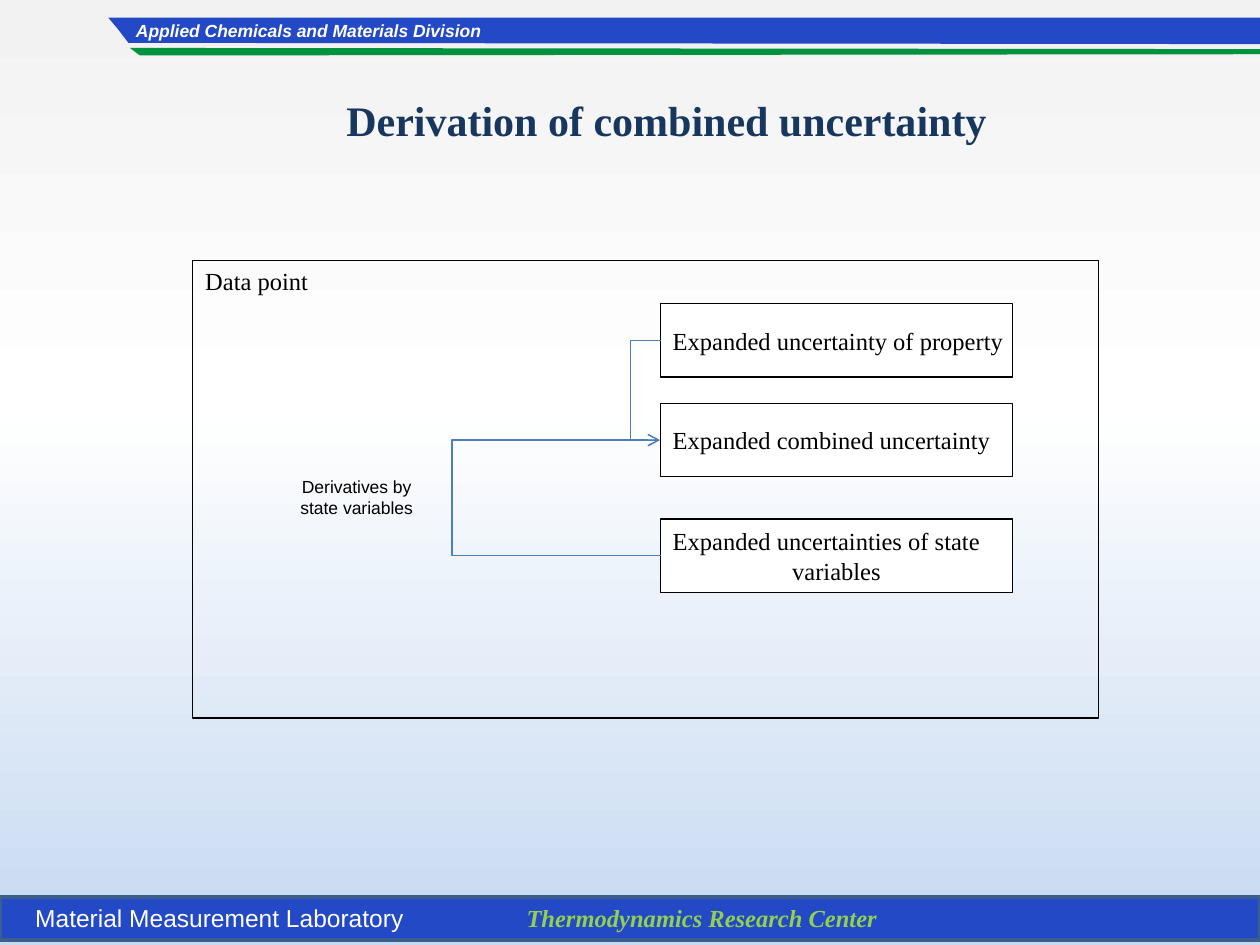
"""Build the slide on the derivation of combined uncertainty."""
from lxml.etree import SubElement
from pptx import Presentation
from pptx.dml.color import RGBColor
from pptx.enum.shapes import MSO_CONNECTOR, MSO_SHAPE
from pptx.enum.text import MSO_ANCHOR, MSO_AUTO_SIZE, PP_ALIGN
from pptx.oxml.ns import qn
from pptx.util import Pt

HUES = {"blue": "2349C6", "edge": "3A5F8C", "green": "00923F", "lime": "92D050",
        "navy": "17375E", "link": "4B7EBC", "black": "000000", "white": "FFFFFF"}
SKY = {0: "F2F2F2", 43000: "FFFFFF", 100000: "C6D9F1"}
SERIF, SANS = "Times New Roman", "Arial"
BODY = {"name": SERIF, "size": Pt(14)}
LEFT, MID = PP_ALIGN.LEFT, PP_ALIGN.CENTER


def write(shape, lines, hue, style, aligns=(LEFT,), anchor=MSO_ANCHOR.TOP, wrap=True):
    frame = shape.text_frame
    frame.text = "\n".join(lines)
    form = {"word_wrap": wrap, "auto_size": MSO_AUTO_SIZE.NONE, "vertical_anchor": anchor}
    for key, val in form.items():
        setattr(frame, key, val)
    for para, align in zip(frame.paragraphs, aligns):
        para.alignment = align
        for key, val in style.items():
            setattr(para.font, key, val)
        para.font.color.rgb = RGBColor.from_string(HUES[hue])


def paint(shape, fill=None, line=None, width=0.75):
    shape.shadow.inherit = False
    if fill:
        shape.fill.solid()
        shape.fill.fore_color.rgb = RGBColor.from_string(HUES[fill])
    else:
        shape.fill.background()
    if line:
        shape.line.color.rgb = RGBColor.from_string(HUES[line])
        shape.line.width = Pt(width)
    else:
        shape.line.fill.background()


deck = Presentation()
deck.slide_width, deck.slide_height = Pt(720), Pt(540)
slide = deck.slides.add_slide(deck.slide_layouts[5])
shapes = slide.shapes

back = slide.background.fill
back.gradient()
back.gradient_angle = 270
stops = slide.background._cSld.find(".//" + qn("a:gsLst"))
for stop in list(stops):
    stops.remove(stop)
for pos, hue in SKY.items():
    stop = SubElement(stops, qn("a:gs"), pos=str(pos))
    SubElement(stop, qn("a:srgbClr"), val=hue)

bar = shapes.add_shape(MSO_SHAPE.RECTANGLE, Pt(0), Pt(512.6), Pt(720), Pt(24.5))
paint(bar, "blue", "edge", 2)

bands = [
    ("green", [(74.2, 27.4), (720, 28.1), (720, 31), (80, 31.7)]),
    ("blue", [(61.9, 10.1), (720, 10.1), (720, 25.2), (73.4, 24.5), (67.7, 17)]),
]
for hue, dots in bands:
    dots = [(Pt(x), Pt(y)) for x, y in dots]
    pen = shapes.build_freeform(*dots[0])
    pen.add_line_segments(dots[1:], close=True)
    paint(pen.convert_to_shape(), hue)

title = shapes.title
spot = {"left": Pt(106.6), "top": Pt(50.4), "width": Pt(548.6), "height": Pt(36)}
for key, val in spot.items():
    setattr(title, key, val)
write(title, ["Derivation of combined uncertainty"], "navy",
      {"name": SERIF, "size": Pt(24), "bold": True}, [MID])

slant = {"bold": True, "italic": True}
labels = [
    ((13, 512.6, 265, 24.5), ["Material Measurement Laboratory"], "white",
     {"name": SANS, "size": Pt(14)}, [LEFT]),
    ((70.6, 7.9, 226, 20.2), ["Applied Chemicals and Materials Division"], "white",
     {"name": SANS, "size": Pt(10), **slant}, [LEFT]),
    ((293.8, 512.6, 293, 29.5), ["Thermodynamics Research Center"], "lime",
     {**BODY, **slant}, [LEFT]),
    ((153.4, 268.6, 100.8, 31.7), ["Derivatives by", "state variables"], "black",
     {"name": SANS, "size": Pt(10)}, [MID, MID]),
]
for area, lines, hue, style, aligns in labels:
    box = shapes.add_textbox(*map(Pt, area))
    write(box, lines, hue, style, aligns)

frame = shapes.add_shape(MSO_SHAPE.RECTANGLE, Pt(110.2), Pt(148.7), Pt(517.6), Pt(261.7))
paint(frame, line="black")
write(frame, ["Data point"], "black", BODY, wrap=False)

tall = 42
cards = [
    (173.5, ["Expanded uncertainty of property"]),
    (230.5, ["Expanded combined uncertainty"]),
    (296.6, ["Expanded uncertainties of state", "variables"]),
]
for top, lines in cards:
    card = shapes.add_shape(MSO_SHAPE.RECTANGLE, Pt(377.3), Pt(top), Pt(201.4), Pt(tall))
    paint(card, "white", "black")
    write(card, lines, "black", BODY, [LEFT, MID], MSO_ANCHOR.MIDDLE, False)

first, goal, last = [top + tall / 2 for top, lines in cards]
for start, reach in [(first, 18), (last, 120.67)]:
    link = shapes.add_connector(MSO_CONNECTOR.ELBOW, Pt(378), Pt(start), Pt(377), Pt(goal))
    link.line.color.rgb = RGBColor.from_string(HUES["link"])
    link.line.width = Pt(0.75)
    props = link._element.spPr
    SubElement(props.find(qn("a:ln")), qn("a:tailEnd"), type="arrow")
    SubElement(props, qn("a:effectLst"))
    bend = props.find(qn("a:prstGeom")).get_or_add_avLst()
    SubElement(bend, qn("a:gd"), name="adj1", fmla=f"val {round(reach * 100000)}")

deck.save("out.pptx")
